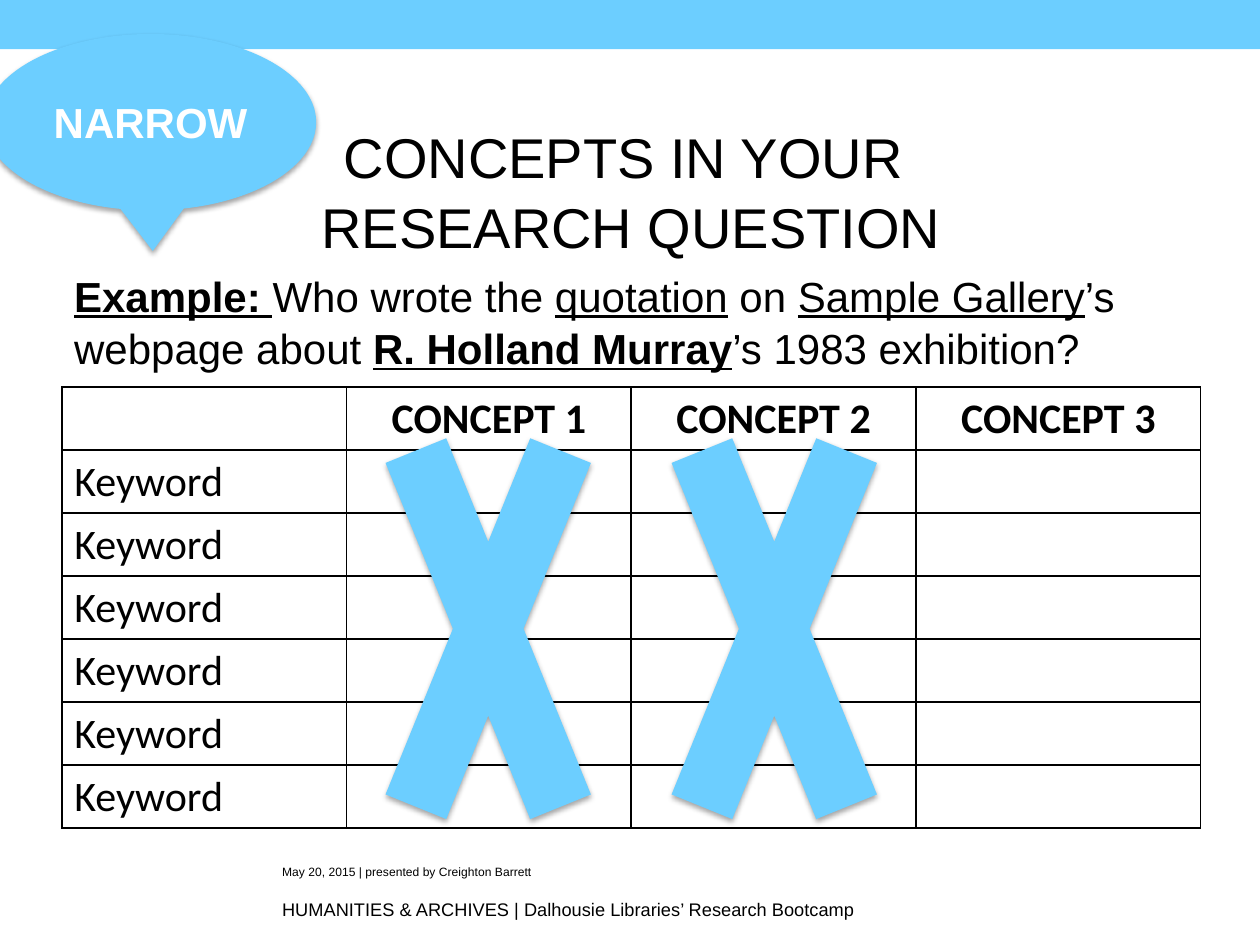
from typing import NamedTuple

from lxml.etree import SubElement
from pptx import Presentation
from pptx.dml.color import RGBColor
from pptx.enum.shapes import MSO_SHAPE
from pptx.enum.text import MSO_ANCHOR, MSO_AUTO_SIZE, PP_ALIGN
from pptx.oxml.ns import qn
from pptx.util import Inches, Pt

SKY = RGBColor(0x6C, 0xCE, 0xFF)
BLACK = RGBColor(0, 0, 0)
WHITE = RGBColor(255, 255, 255)


class Box(NamedTuple):
    left: float
    top: float
    width: float
    height: float

    def lengths(self) -> list:
        return [Inches(value) for value in self]


class Phrase(NamedTuple):
    text: str
    underline: bool = False
    bold: bool = False


BAR = Box(0, 0, 10, 0.39)
BODY = Box(0.49, 0.9, 9.04, 0.63)
GRID = Box(0.49, 3.07, 9.04, 3.5)
CALLOUT = Box(-0.12, 0.27, 2.63, 1.4)
CROSSES = [Box(left, 2.27, 2.21, 5.44) for left in (2.77, 5.04)]
FOOTER = Box(2.14, 6.75, 5.64, 0.5)

QUESTION = [
    Phrase("Example: ", True, True),
    Phrase("Who wrote the "),
    Phrase("quotation", True),
    Phrase(" on "),
    Phrase("Sample Gallery", True),
    Phrase("’s webpage about "),
    Phrase("R. Holland Murray", True, True),
    Phrase("’s 1983 exhibition?"),
]
FOOTER_LINES = [
    ("May 20, 2015 | presented by Creighton Barrett", 12),
    ("HUMANITIES & ARCHIVES | Dalhousie Libraries’ Research Bootcamp", 18),
]
HEADINGS = ["", "CONCEPT 1", "CONCEPT 2", "CONCEPT 3"]
KEYWORD_ROWS = 6


def style(font, size: float, color: RGBColor = BLACK, name: str = "Arial", bold: bool = False) -> None:
    font.name = name
    font.size = Pt(size)
    font.bold = bold
    font.color.rgb = color


def add_sky_shape(page, kind: MSO_SHAPE, box: Box, shadow: bool = True):
    shape = page.shapes.add_shape(kind, *box.lengths())
    shape.fill.solid()
    shape.fill.fore_color.rgb = SKY
    shape.line.fill.background()
    shape.shadow.inherit = False
    if shadow:
        effects = shape._element.spPr.find(qn("a:effectLst"))
        outer = SubElement(effects, qn("a:outerShdw"), blurRad=str(Pt(3.1)),
                           dist=str(Pt(1.8)), dir="5400000", rotWithShape="0")
        color = SubElement(outer, qn("a:srgbClr"), val=str(BLACK))
        SubElement(color, qn("a:alpha"), val="35000")
    return shape


def add_footer(page) -> None:
    frame = page.shapes.add_textbox(*FOOTER.lengths()).text_frame
    frame.word_wrap = True
    frame.auto_size = MSO_AUTO_SIZE.SHAPE_TO_FIT_TEXT
    frame.text = "\n".join(text for text, _ in FOOTER_LINES)
    for para, (_, size) in zip(frame.paragraphs, FOOTER_LINES):
        para.line_spacing = 1.2
        span = para.runs[0]
        style(span.font, size)
        span.font._element.set("baseline", "30000")


def add_body(page) -> None:
    frame = page.shapes.add_textbox(*BODY.lengths()).text_frame
    frame.word_wrap = True
    title = frame.paragraphs[0]
    title.text = "CONCEPTS IN YOUR \vRESEARCH QUESTION"
    title.alignment = PP_ALIGN.CENTER
    for span in title.runs:
        style(span.font, 32)
    question = frame.add_paragraph()
    question.space_before = Pt(5)
    for phrase in QUESTION:
        span = question.add_run()
        span.text = phrase.text
        style(span.font, 24, bold=phrase.bold)
        span.font.underline = phrase.underline
    for para in frame.paragraphs:
        para.line_spacing = 1.04


def set_borders(cell) -> None:
    """Draw a thin black line on each side of a cell without fill."""
    properties = cell._tc.get_or_add_tcPr()
    for side in ("a:lnL", "a:lnR", "a:lnT", "a:lnB"):
        line = SubElement(properties, qn(side), w=str(Pt(1)))
        fill = SubElement(line, qn("a:solidFill"))
        SubElement(fill, qn("a:srgbClr"), val=str(BLACK))
    cell.fill.background()


def add_concept_table(page) -> None:
    rows = [HEADINGS] + [["Keyword", "", "", ""]] * KEYWORD_ROWS
    table = page.shapes.add_table(len(rows), len(HEADINGS), *GRID.lengths()).table
    table.first_row = table.horz_banding = False
    for row_index, texts in enumerate(rows):
        for column_index, text in enumerate(texts):
            cell = table.cell(row_index, column_index)
            set_borders(cell)
            cell.text = text
            para = cell.text_frame.paragraphs[0]
            style(para.font, 24, name="Calibri")
            for span in para.runs:
                style(span.font, 24, name="Calibri", bold=row_index == 0)
            if row_index == 0:
                para.alignment = PP_ALIGN.CENTER


def add_callout(page) -> None:
    callout = add_sky_shape(page, MSO_SHAPE.OVAL_CALLOUT, CALLOUT)
    callout.adjustments[0] = 0.007
    callout.adjustments[1] = 0.73
    frame = callout.text_frame
    frame.text = "NARROW"
    frame.vertical_anchor = MSO_ANCHOR.MIDDLE
    para = frame.paragraphs[0]
    para.alignment = PP_ALIGN.CENTER
    style(para.runs[0].font, 24, WHITE, bold=True)


def main() -> None:
    deck = Presentation()
    deck.slide_width, deck.slide_height = Inches(10), Inches(7.5)
    page = deck.slides.add_slide(deck.slide_layouts[6])
    add_footer(page)
    add_sky_shape(page, MSO_SHAPE.RECTANGLE, BAR, shadow=False)
    add_body(page)
    add_concept_table(page)
    add_callout(page)
    for cross in CROSSES:
        add_sky_shape(page, MSO_SHAPE.MATH_MULTIPLY, cross)
    deck.save("out.pptx")


if __name__ == "__main__":
    main()
